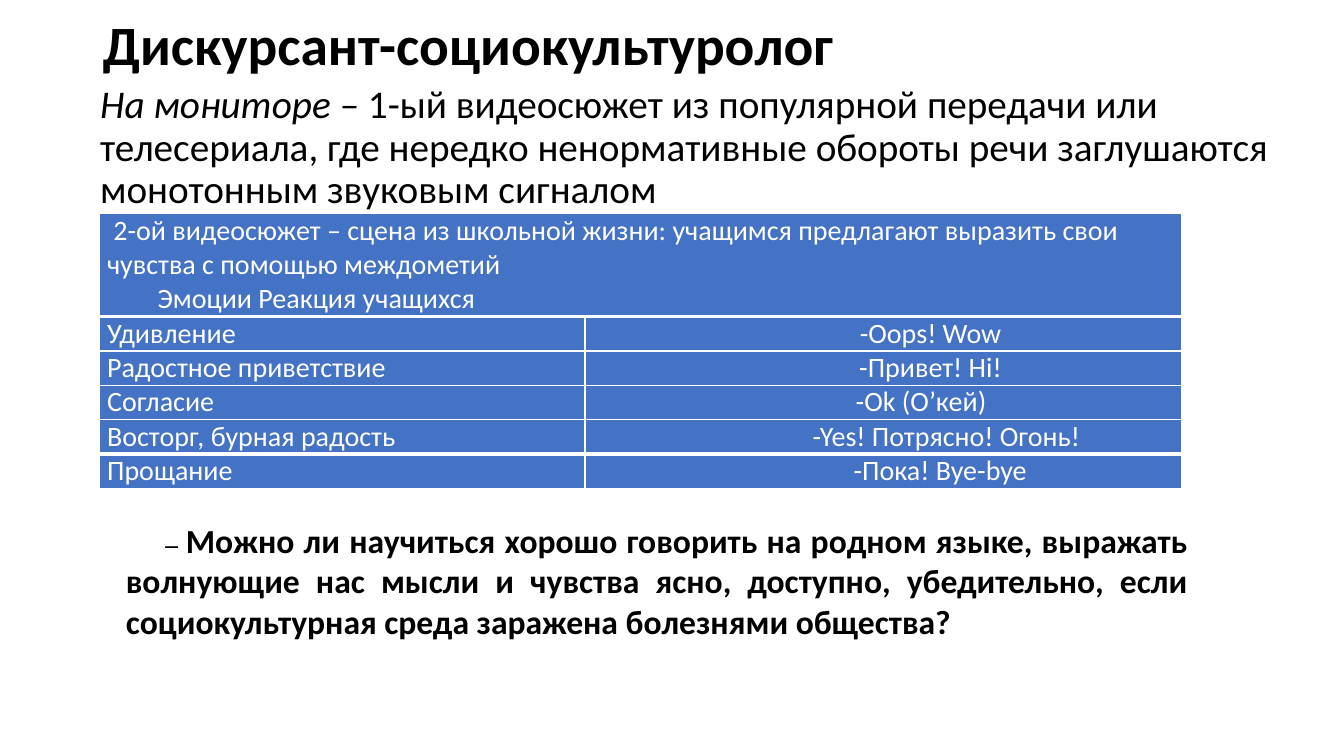
import pptx
import pptx.util
import pptx.dml.color
import pptx.enum.text
import pptx.oxml
import pptx.oxml.ns

Pt = pptx.util.Pt
ALIGN = pptx.enum.text.PP_ALIGN
ANCHOR = pptx.enum.text.MSO_ANCHOR
qn = pptx.oxml.ns.qn
NS = pptx.oxml.ns.nsdecls("a")
HUES = {"ink": "000000", "paper": "FFFFFF", "blue": "4472C4"}

deck = pptx.Presentation()
deck.slide_width = pptx.util.Inches(13.33)
deck.slide_height = pptx.util.Inches(7.5)
slide = deck.slides.add_slide(deck.slide_layouts[1])
PCT_W = deck.slide_width / 100
PCT_H = deck.slide_height / 100


def area(left, top, width, height):
    """Turn percent of the slide into lengths."""
    return [int(n * unit) for n, unit in
            zip((left, top, width, height), (PCT_W, PCT_H, PCT_W, PCT_H))]


def dress(par, size, hue, align=ALIGN.LEFT, left=0, first=0):
    """Format all runs of a paragraph; indents are percent of slide width."""
    par.alignment = align
    props = par._p.get_or_add_pPr()
    props.set("marL", str(int(left * PCT_W)))
    props.set("indent", str(int(first * PCT_W)))
    for run in par.runs:
        run.font.name = "Calibri"
        run.font.size = Pt(size)
        run.font.color.rgb = pptx.dml.color.RGBColor.from_string(HUES[hue])


# Title and lead text
title, body = slide.shapes.title, slide.placeholders[1]
places = [(title, (6.9, 1.75, 88.8, 8.95)), (body, (6.7, 10.55, 89.3, 81.2))]
for shape, place in places:
    shape.left, shape.top, shape.width, shape.height = area(*place)
    shape.text_frame.auto_size = pptx.enum.text.MSO_AUTO_SIZE.NONE
    shape.text_frame.word_wrap = True

title.text_frame.text = "Дискурсант-социокультуролог"
title.text_frame.vertical_anchor = ANCHOR.MIDDLE
head = title.text_frame.paragraphs[0]
head.line_spacing = 0.9
dress(head, 39.6, "ink")
head.runs[0].font.bold = True

body.text_frame.vertical_anchor = ANCHOR.TOP
lead = body.text_frame.paragraphs[0]
lead.text = "На мониторе –"
lead.add_run().text = (
    " 1-ый видеосюжет из популярной передачи или телесериала, где нередко "
    "ненормативные обороты речи заглушаются монотонным звуковым сигналом")
lead.line_spacing = 0.9
lead.space_before = Pt(10)
dress(lead, 28, "ink")
lead._p.get_or_add_pPr().append(pptx.oxml.parse_xml(f"<a:buNone {NS}/>"))
lead.runs[0].font.italic = True

# Table: emotion, reaction, left indent of the reaction
ROWS = [
    ("Удивление", "-Oops! Wow", 7.06),
    ("Радостное приветствие", "-Привет! Hi!", 7.06),
    ("Согласие", "-Ok (О’кей)", 5.65),
    ("Восторг, бурная радость", "-Yes! Потрясно! Огонь!", 9.42),
    ("Прощание", "-Пока! Bye-bye", 8.48),
]
COLS = (36.1, 44.36)
last = len(ROWS)
frame = slide.shapes.add_table(last + 1, 2, *area(7.43, 28.27, sum(COLS), 35.6))
table = frame.table
for col, share in zip(table.columns, COLS):
    col.width = int(share * PCT_W)
for num, row in enumerate(table.rows):
    row.height = int((4.45 if num else 13.33) * PCT_H)

table.cell(0, 0).merge(table.cell(0, 1))
text = table.cell(0, 0).text_frame
text.text = ("2-ой видеосюжет – сцена из школьной жизни: учащимся предлагают "
             "выразить свои чувства с помощью междометий")
dress(text.paragraphs[0], 20, "paper", first=0.47)
heads = text.add_paragraph()
heads.text = "\tЭмоции\tРеакция учащихся"
dress(heads, 20, "paper")
tabs = "".join(f'<a:tab pos="{int(n * PCT_W)}" algn="l"/>' for n in (7.6, 48.1))
heads._p.get_or_add_pPr().append(
    pptx.oxml.parse_xml(f"<a:tabLst {NS}>{tabs}</a:tabLst>"))

for num, (mood, reply, shift) in enumerate(ROWS, 1):
    for col, words in enumerate((mood, reply)):
        par = table.cell(num, col).text_frame.paragraphs[0]
        par.text = words
        if col:
            dress(par, 20, "paper", ALIGN.CENTER, left=shift)
        else:
            dress(par, 20, "paper")

# Cell fills and borders, thick under the heading and above the last row
for num in range(last + 1):
    for col in range(2):
        cell = table.cell(num, col)
        cell.margin_left = cell.margin_right = int(0.54 * PCT_W)
        cell.margin_top = cell.margin_bottom = 0
        cell.fill.solid()
        cell.fill.fore_color.rgb = pptx.dml.color.RGBColor.from_string(HUES["blue"])
        thick = {"T": num in (1, last), "B": num in (0, last - 1)}
        for spot, side in enumerate("LRTB"):
            width = Pt(3 if thick.get(side) else 1)
            cell._tc.get_or_add_tcPr().insert(spot, pptx.oxml.parse_xml(
                f'<a:ln{side} {NS} w="{width}"><a:solidFill><a:srgbClr '
                f'val="{HUES["paper"]}"/></a:solidFill></a:ln{side}>'))

# Closing question
box = slide.shapes.add_textbox(*area(8.63, 68.13, 80.5, 17.47))
box.text_frame.word_wrap = True
ask = box.text_frame.paragraphs[0]
ask.text = "– "
ask.add_run().text = (
    "Можно ли научиться хорошо говорить на родном языке, выражать волнующие "
    "нас мысли и чувства ясно, доступно, убедительно, если социокультурная "
    "среда заражена болезнями общества?")
dress(ask, 24, "ink", ALIGN.JUSTIFY, first=2.93)
for run in ask.runs:
    run.font.bold = True
ask.runs[0].font.name = "Times New Roman"
ask.runs[0].font.size = Pt(18)

deck.save("out.pptx")
